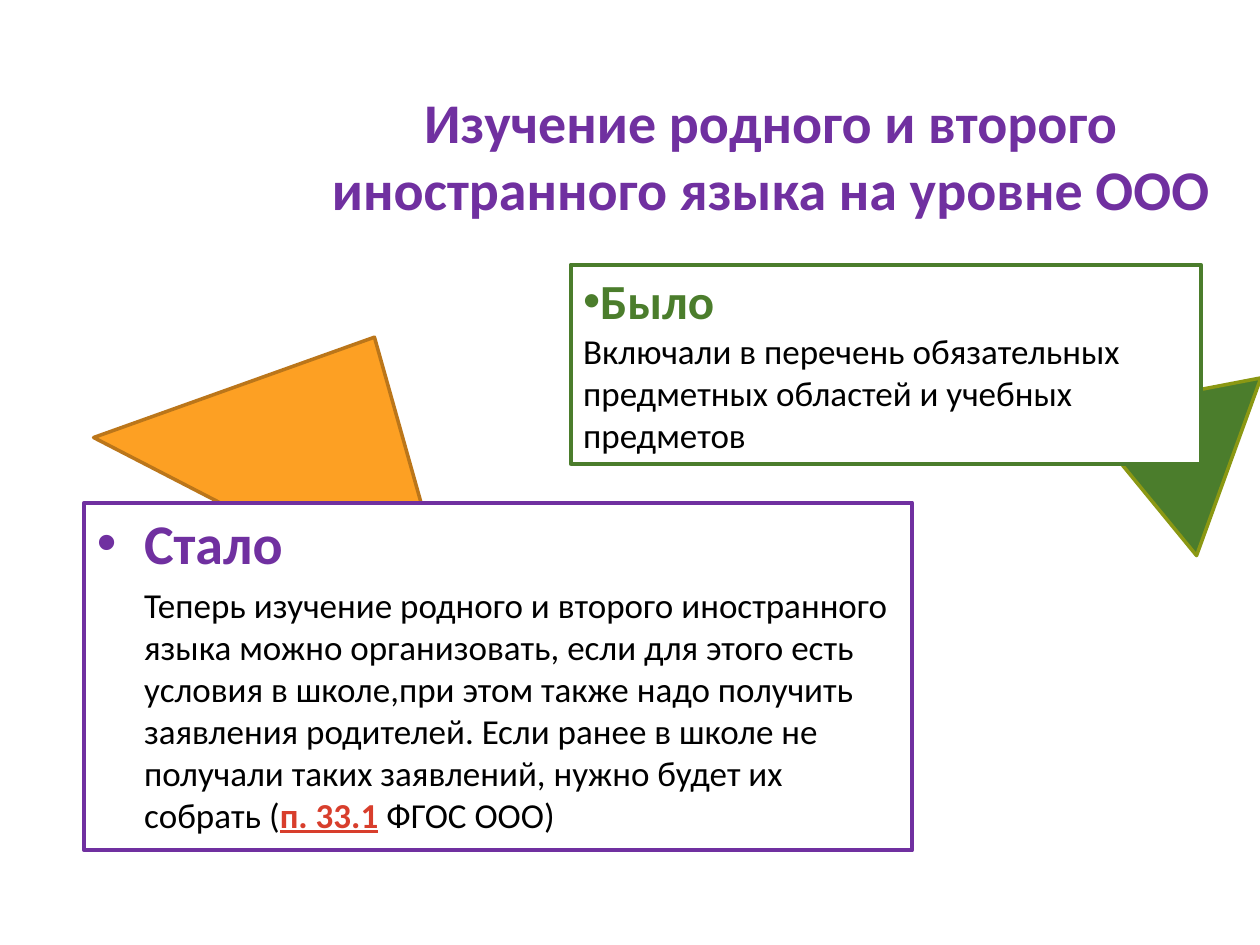
from dataclasses import dataclass

from lxml.etree import SubElement
from pptx import Presentation
from pptx.dml.color import RGBColor
from pptx.enum.shapes import MSO_SHAPE
from pptx.enum.text import MSO_ANCHOR, MSO_AUTO_SIZE, PP_ALIGN
from pptx.oxml.ns import qn
from pptx.util import Inches, Pt

HEX = {
    "violet": "7030A0", "green": "4B7D2C", "olive": "8B9813",
    "orange": "FDA023", "brown": "BB761A", "red": "D83E2C",
    "black": "000000", "white": "FFFFFF",
}
UNIT = Inches(0.1)  # grid of 100 columns by 75 rows
FACE = "Calibri"


@dataclass
class Spot:
    col: float
    row: float
    wide: float
    high: float

    def place(self) -> tuple:
        return tuple(round(n * UNIT) for n in (self.col, self.row, self.wide, self.high))


@dataclass
class Wedge:
    spot: Spot
    turn: float
    fill: str
    edge: str


@dataclass
class Run:
    text: str
    link: bool = False


@dataclass
class Card:
    spot: Spot
    hue: str
    head: str
    size: int
    runs: list
    indent: float = 0  # hanging indent in columns
    gap: float = 0  # points between heading and text


WEDGES = [
    Wedge(Spot(84.1, 28.6, 15, 12.6), 289.9, "green", "olive"),
    Wedge(Spot(9.6, 25.8, 32.3, 17.3), 27.3, "orange", "brown"),
]
CARDS = [
    Card(Spot(6.7, 39.9, 65.7, 27.6), "violet", "Стало", 32, [
        Run("Теперь изучение родного и второго иностранного языка можно "
            "организовать, если для этого есть условия в школе,при этом также "
            "надо получить заявления родителей. Если ранее в школе "
            "не получали таких заявлений, нужно будет их собрать ("),
        Run("п. 33.1", link=True),
        Run(" ФГОС ООО)"),
    ], indent=3.75, gap=4),
    Card(Spot(45.3, 21, 50, 15.8), "green", "Было", 28, [
        Run("Включали в перечень обязательных предметных областей "
            "и учебных предметов"),
    ]),
]


def tint(name: str) -> RGBColor:
    return RGBColor.from_string(HEX[name])


def style(font, size: float, hue: str, bold: bool) -> None:
    font.name, font.size, font.bold = FACE, Pt(size), bold
    font.color.rgb = tint(hue)


def paint(shape, fill: str, edge: str, width: float) -> None:
    shape.fill.solid()
    shape.fill.fore_color.rgb = tint(fill)
    shape.line.color.rgb = tint(edge)
    shape.line.width = Pt(width)


def inset(para, cols: float, hang: float):
    props = para._p.get_or_add_pPr()
    props.set("marL", str(round(cols * UNIT)))
    props.set("indent", str(round(-hang * UNIT)))
    return props


def draw_wedge(slide, wedge: Wedge) -> None:
    shape = slide.shapes.add_shape(MSO_SHAPE.ISOSCELES_TRIANGLE, *wedge.spot.place())
    shape.shadow.inherit = False
    shape.rotation = wedge.turn
    paint(shape, wedge.fill, wedge.edge, 2)


def draw_card(slide, card: Card) -> None:
    box = slide.shapes.add_textbox(*card.spot.place())
    paint(box, "white", card.hue, 2.25)
    frame = box.text_frame
    frame.word_wrap = True

    # Bulleted heading
    head = frame.paragraphs[0]
    props = inset(head, card.indent, card.indent)
    SubElement(props, qn("a:buFont")).set("typeface", "Arial")
    SubElement(props, qn("a:buChar")).set("char", "•")
    head.text = card.head
    style(head.font, card.size, card.hue, True)

    # Body text
    body = frame.add_paragraph()
    inset(body, card.indent, 0)
    body.space_before = Pt(card.gap)
    style(body.font, 20, "black", False)
    for item in card.runs:
        run = body.add_run()
        run.text = item.text
        if item.link:
            style(run.font, 20, "red", True)
            run.font.underline = True


def draw_title(slide, text: str, spot: Spot) -> None:
    title = slide.shapes.title
    title.left, title.top, title.width, title.height = spot.place()
    frame = title.text_frame
    frame.text = text
    frame.word_wrap = True
    frame.auto_size = MSO_AUTO_SIZE.NONE
    frame.vertical_anchor = MSO_ANCHOR.MIDDLE
    para = frame.paragraphs[0]
    para.alignment = PP_ALIGN.CENTER
    style(para.font, 32, "violet", True)


def main() -> None:
    deck = Presentation()
    deck.slide_width, deck.slide_height = 100 * UNIT, 75 * UNIT
    slide = deck.slides.add_slide(deck.slide_layouts[5])
    draw_title(slide, "Изучение родного и второго иностранного языка на уровне ООО",
               Spot(22.4, 6, 77.6, 12.6))
    for wedge in WEDGES:
        draw_wedge(slide, wedge)
    for card in CARDS:
        draw_card(slide, card)
    deck.save("out.pptx")


if __name__ == "__main__":
    main()
